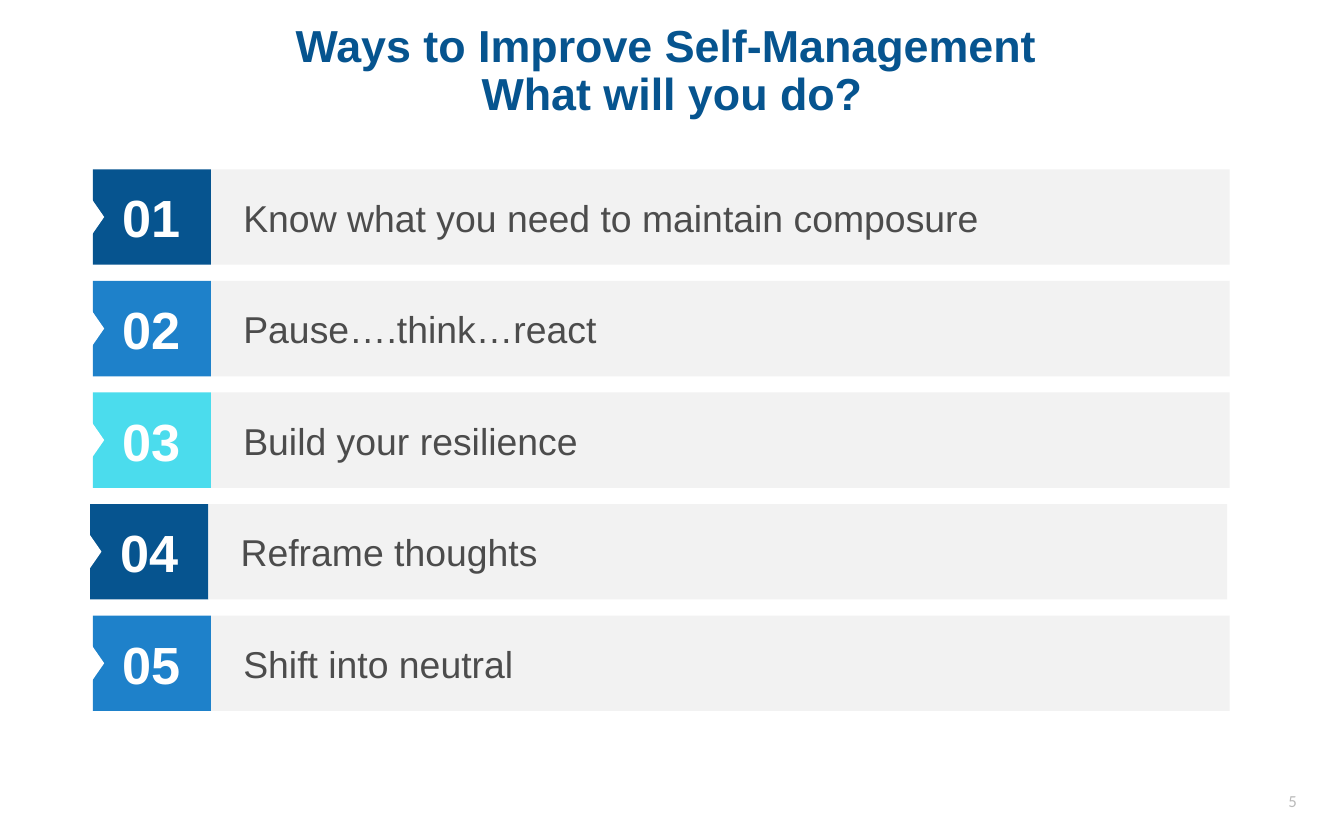
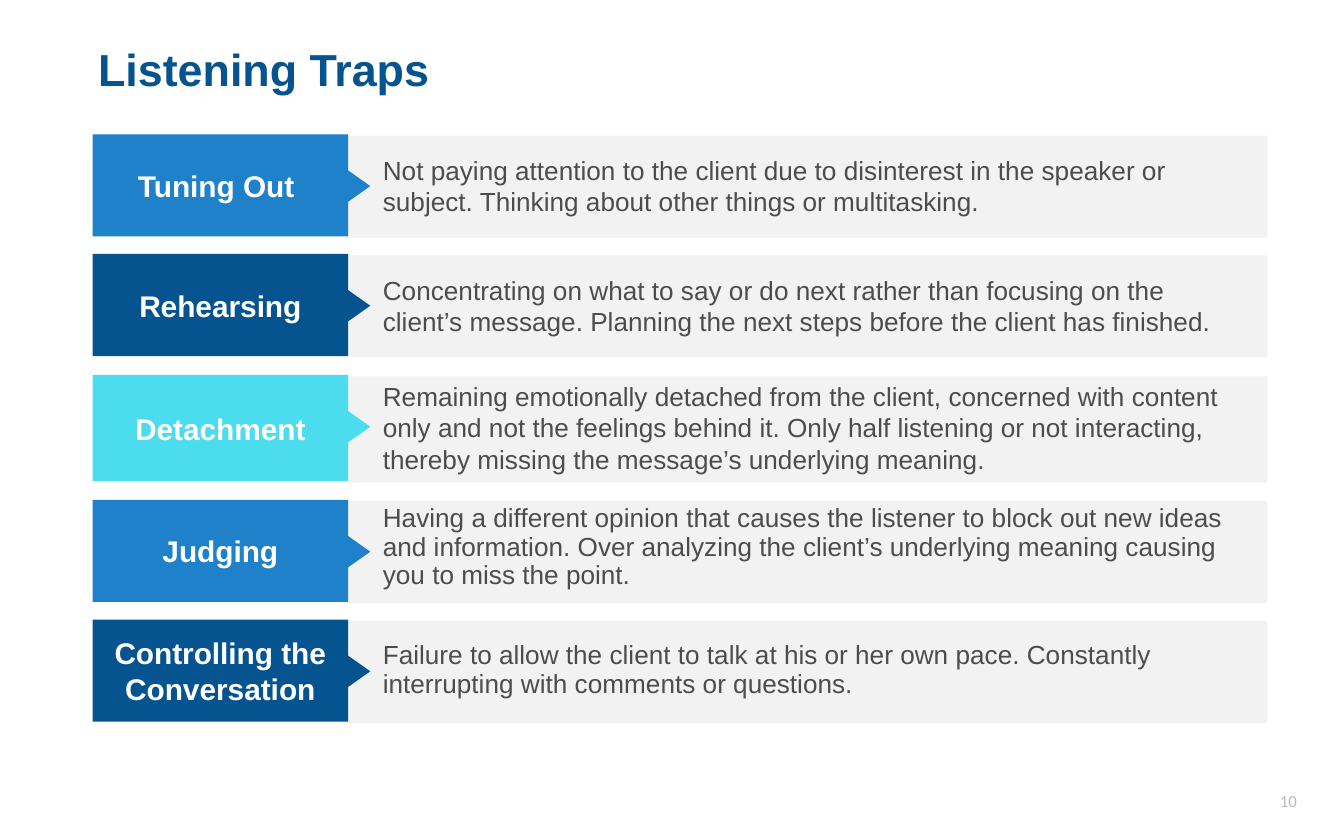
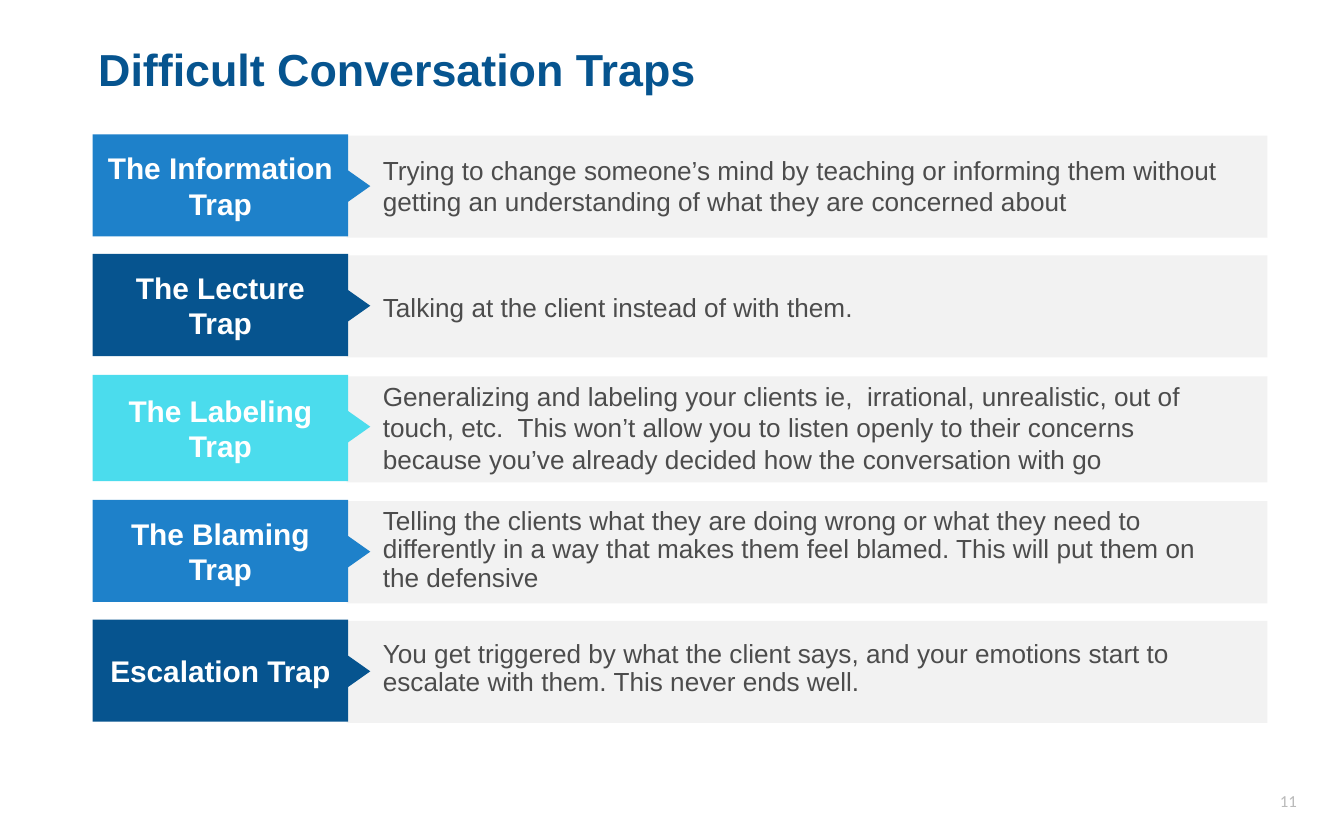
from pptx import Presentation
from pptx.dml.color import RGBColor
from pptx.enum.shapes import MSO_SHAPE
from pptx.enum.text import MSO_ANCHOR, MSO_AUTO_SIZE, PP_ALIGN
from pptx.util import Inches, Pt

NAVY, BLUE, CYAN = "06548F", "1E81CA", "4BDCED"
WHITE, BAND, BODY, MUTED = "FFFFFF", "F2F2F2", "4C4C4C", "BABABA"
TIGHT, ROOMY = (0.04, 0.02), (0.1, 0.05)
LEFT = 0.69
TITLE_BOX = (LEFT, 0.16, 8.62, 0.75)
NUMBER_BOX = (7.44, 5.79, 2.25, 0.33)

# Left edge, colour and wording of each self-management step
STEPS = [
    (LEFT, NAVY, "Know what you need to maintain composure"),
    (LEFT, BLUE, "Pause….think…react"),
    (LEFT, CYAN, "Build your resilience"),
    (0.67, NAVY, "Reframe thoughts"),
    (LEFT, BLUE, "Shift into neutral"),
]

# Top, height, colour and line spacing of each trap row
TRAP_ROWS = [
    (1.0, 0.76, BLUE, 1.0),
    (1.89, 0.76, NAVY, 1.0),
    (2.79, 0.79, CYAN, 1.0),
    (3.72, 0.76, BLUE, 0.9),
    (4.61, 0.76, NAVY, 0.9),
]

# Name, top of the description, description
LISTENING_TRAPS = [
    ("Tuning Out ", 1.1,
     "Not paying attention to the client due to disinterest in the speaker or "
     "subject. Thinking about other things or multitasking."),
    ("Rehearsing", 1.99,
     "Concentrating on what to say or do next rather than focusing on the "
     "client’s message. Planning the next steps before the client has finished."),
    ("Detachment", 2.78,
     "Remaining emotionally detached from the client, concerned with content "
     "only and not the feelings behind it. Only half listening or not "
     "interacting, thereby missing the message’s underlying meaning."),
    ("Judging", 3.71,
     "Having a different opinion that causes the listener to block out new "
     "ideas and information. Over analyzing the client’s underlying meaning "
     "causing you to miss the point."),
    ("Controlling the Conversation", 4.73,
     "Failure to allow the client to talk at his or her own pace. Constantly "
     "interrupting with comments or questions."),
]

CONVERSATION_TRAPS = [
    ("The Information Trap", 1.1,
     "Trying to change someone’s mind by teaching or informing them without "
     "getting an understanding of what they are concerned about"),
    ("The Lecture Trap", 2.12, "Talking at the client instead of with them."),
    ("The Labeling Trap", 2.78,
     "Generalizing and labeling your clients ie,  irrational, unrealistic, out "
     "of touch, etc.  This won’t allow you to listen openly to their concerns "
     "because you’ve already decided how the conversation with go"),
    ("The Blaming Trap", 3.73,
     "Telling the clients what they are doing wrong or what they need to "
     "differently in a way that makes them feel blamed. This will put them on "
     "the defensive"),
    ("Escalation Trap", 4.72,
     "You get triggered by what the client says, and your emotions start to "
     "escalate with them. This never ends well."),
]


def color(hex_value):
    return RGBColor.from_string(hex_value)


def inches(box):
    return [Inches(length) for length in box]


class Deck:
    def __init__(self):
        self.presentation = Presentation()
        self.presentation.slide_width = Inches(10)
        self.presentation.slide_height = Inches(6.25)
        self.slide = None
        self.shapes = None

    def add_slide(self, title, number, align=PP_ALIGN.LEFT):
        layout = self.presentation.slide_layouts.get_by_name("Title Only")
        self.slide = self.presentation.slides.add_slide(layout)
        self.shapes = self.slide.shapes
        heading = self.shapes.title
        heading.left, heading.top, heading.width, heading.height = inches(TITLE_BOX)
        self.set_text(heading, title, 24, NAVY, bold=True, align=align,
                      insets=TIGHT, spacing=0.9)
        self.text(NUMBER_BOX, str(number), 9, MUTED, font="Calibri",
                  align=PP_ALIGN.RIGHT, insets=TIGHT)

    def start_row(self):
        """Collect the next elements in a new group."""
        self.shapes = self.slide.shapes.add_group_shape().shapes

    def set_text(self, holder, text, size, hue, bold=False, font="Arial",
                 align=PP_ALIGN.LEFT, anchor=MSO_ANCHOR.MIDDLE, insets=ROOMY,
                 spacing=1.0):
        frame = holder.text_frame
        frame.word_wrap = True
        frame.auto_size = MSO_AUTO_SIZE.NONE
        frame.vertical_anchor = anchor
        frame.margin_left = frame.margin_right = Inches(insets[0])
        frame.margin_top = frame.margin_bottom = Inches(insets[1])
        paragraph = frame.paragraphs[0]
        paragraph.text = text
        paragraph.alignment = align
        paragraph.line_spacing = spacing
        for run in paragraph.runs:
            run.font.name = font
            run.font.size = Pt(size)
            run.font.bold = bold
            run.font.color.rgb = color(hue)

    def text(self, box, text, size, hue, **style):
        self.set_text(self.shapes.add_textbox(*inches(box)), text, size, hue, **style)

    def block(self, box, fill, kind=MSO_SHAPE.RECTANGLE):
        block = self.shapes.add_shape(kind, *inches(box))
        block.shadow.inherit = False
        block.fill.solid()
        block.fill.fore_color.rgb = color(fill)
        block.line.fill.background()
        return block

    def label(self, box, fill, text, size, insets):
        self.set_text(self.block(box, fill), text, size, WHITE, bold=True,
                      align=PP_ALIGN.CENTER, insets=insets)

    def pointer(self, box, fill):
        """Add a triangle that points right; the box is the one before turning."""
        self.block(box, fill, MSO_SHAPE.ISOSCELES_TRIANGLE).rotation = 90

    def step(self, number, left, hue, text):
        top = 1.26 + 0.83 * (number - 1)
        self.start_row()
        self.label((left, top, 0.88, 0.71), hue, f"{number:02}", 28, TIGHT)
        self.block((left + 0.88, top, 7.58, 0.71), BAND)
        self.pointer((left - 0.09, top + 0.31, 0.26, 0.09), WHITE)
        self.text((left + 1.08, top + 0.17, 7.19, 0.38), text, 20, BODY,
                  anchor=MSO_ANCHOR.TOP, insets=TIGHT)

    def trap(self, row, name, text_top, text):
        top, height, hue, spacing = row
        self.start_row()
        self.block((2.58, top + 0.01, 6.85, height), BAND)
        self.label((LEFT, top, 1.9, height), hue, name, 16, ROOMY)
        self.text((2.75, text_top, 6.51, height - 0.05), text, 14, BODY,
                  anchor=MSO_ANCHOR.TOP, spacing=spacing)
        self.pointer((2.55, top + 0.3, 0.24, 0.17), hue)

    def trap_slide(self, title, number, traps):
        self.add_slide(title, number)
        for row, trap in zip(TRAP_ROWS, traps):
            self.trap(row, *trap)


def main():
    deck = Deck()
    deck.add_slide("Ways to Improve Self-Management \nWhat will you do?", 5,
                   PP_ALIGN.CENTER)
    for number, step in enumerate(STEPS, start=1):
        deck.step(number, *step)
    deck.trap_slide("Listening Traps", 10, LISTENING_TRAPS)
    deck.trap_slide("Difficult Conversation Traps", 11, CONVERSATION_TRAPS)
    deck.presentation.save("out.pptx")


if __name__ == "__main__":
    main()
